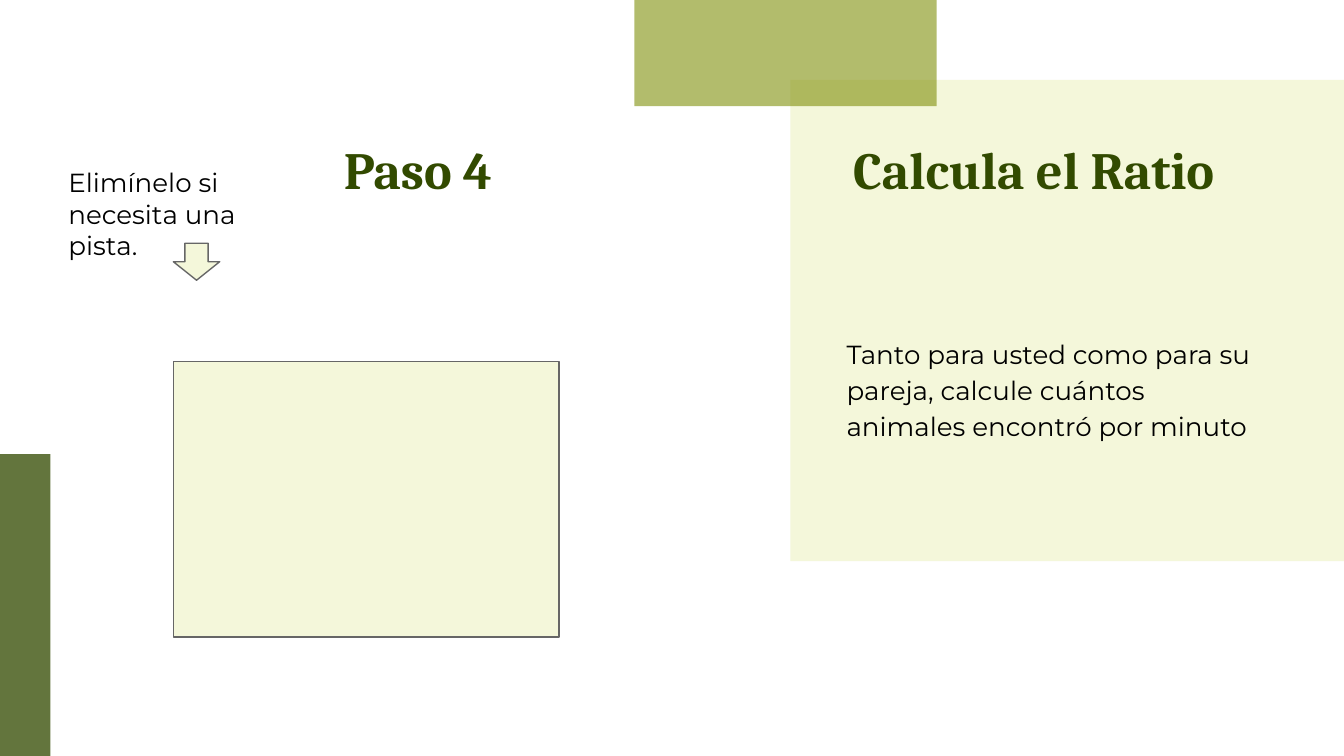
from lxml.etree import SubElement
from pptx import Presentation
from pptx.dml.color import RGBColor
from pptx.enum.shapes import MSO_SHAPE as Shape
from pptx.enum.text import MSO_ANCHOR as Anchor, PP_ALIGN as Align
from pptx.oxml.ns import qn
from pptx.util import Inches, Pt

WHITE = RGBColor(0xFF, 0xFF, 0xFF)
BLACK = RGBColor(0, 0, 0)
CREAM = RGBColor(0xF4, 0xF7, 0xDA)
OLIVE = RGBColor(0x7C, 0x8C, 0x03)
FOREST = RGBColor(0x32, 0x4A, 0x00)
GREY = RGBColor(0x66, 0x66, 0x66)

CELL = 0.1  # inches per grid column and row
COLUMNS, ROWS = 100, 56.25


def cells(*counts):
    """Turn grid counts into lengths."""
    return [Inches(count * CELL) for count in counts]


def write(frame, text, font="Montserrat", size=14, color=BLACK, bold=False,
          align=Align.LEFT, spacing=None, after=None):
    paragraph = frame.paragraphs[0]
    paragraph.alignment = align
    paragraph.line_spacing = spacing
    paragraph.space_after = None if after is None else Pt(after)
    run = paragraph.add_run()
    run.text = text
    run.font.name = font
    run.font.size = Pt(size)
    run.font.bold = bold
    run.font.color.rgb = color


class Page:
    """Holds the deck's style and its current slide."""

    def __init__(self):
        self.deck = Presentation()
        self.deck.slide_width, self.deck.slide_height = cells(COLUMNS, ROWS)
        self.slide = self.deck.slides.add_slide(self.deck.slide_layouts[6])
        background = self.slide.background.fill
        background.solid()
        background.fore_color.rgb = WHITE

    def block(self, *place, kind=Shape.RECTANGLE, fill=CREAM, opacity=None, line=None):
        """Draw a filled shape; opacity is a percentage."""
        block = self.slide.shapes.add_shape(kind, *cells(*place))
        block.shadow.inherit = False
        block.fill.solid()
        block.fill.fore_color.rgb = fill
        if opacity is not None:
            color = block.fill._xPr.find(qn("a:solidFill"))[0]
            SubElement(color, qn("a:alpha"), val=str(opacity * 1000))
        if line is None:
            block.line.fill.background()
        else:
            block.line.color.rgb = line
            block.line.width = Pt(0.75)

    def text(self, *place, text, **style):
        frame = self.slide.shapes.add_textbox(*cells(*place)).text_frame
        frame.word_wrap = True
        frame.vertical_anchor = Anchor.TOP
        frame.margin_left = frame.margin_right = Inches(0.1)
        frame.margin_top = frame.margin_bottom = Inches(0.1)
        write(frame, text, **style)

    def title(self, column, text, align=Align.LEFT):
        self.text(column, 9.2, 31.1, 3.6, text=text, font="Cambria", size=28,
                  color=FOREST, bold=True, align=align)


def main():
    page = Page()
    page.block(58.8, 5.95, 41.2, 35.8)
    page.block(47.2, 0, 22.5, 7.9, fill=OLIVE, opacity=58)
    page.block(0, 33.8, 3.75, ROWS - 33.8, fill=FOREST, opacity=76)

    page.title(6.5, "Paso 4", align=Align.RIGHT)
    page.title(62.5, "Calcula el Ratio")
    page.text(62, 23.8, 33.5, 13.3, spacing=1.15, after=16,
              text="Tanto para usted como para su pareja, calcule cuántos "
                   "animales encontró por minuto")

    page.block(12.9, 26.9, 28.7, 20.5, line=GREY)
    page.text(4.1, 11.4, 19.2, 9.1, text="Elimínelo si necesita una pista.")
    page.block(12.9, 18.1, 3.45, 2.75, kind=Shape.DOWN_ARROW, line=GREY)
    page.deck.save("out.pptx")


if __name__ == "__main__":
    main()
